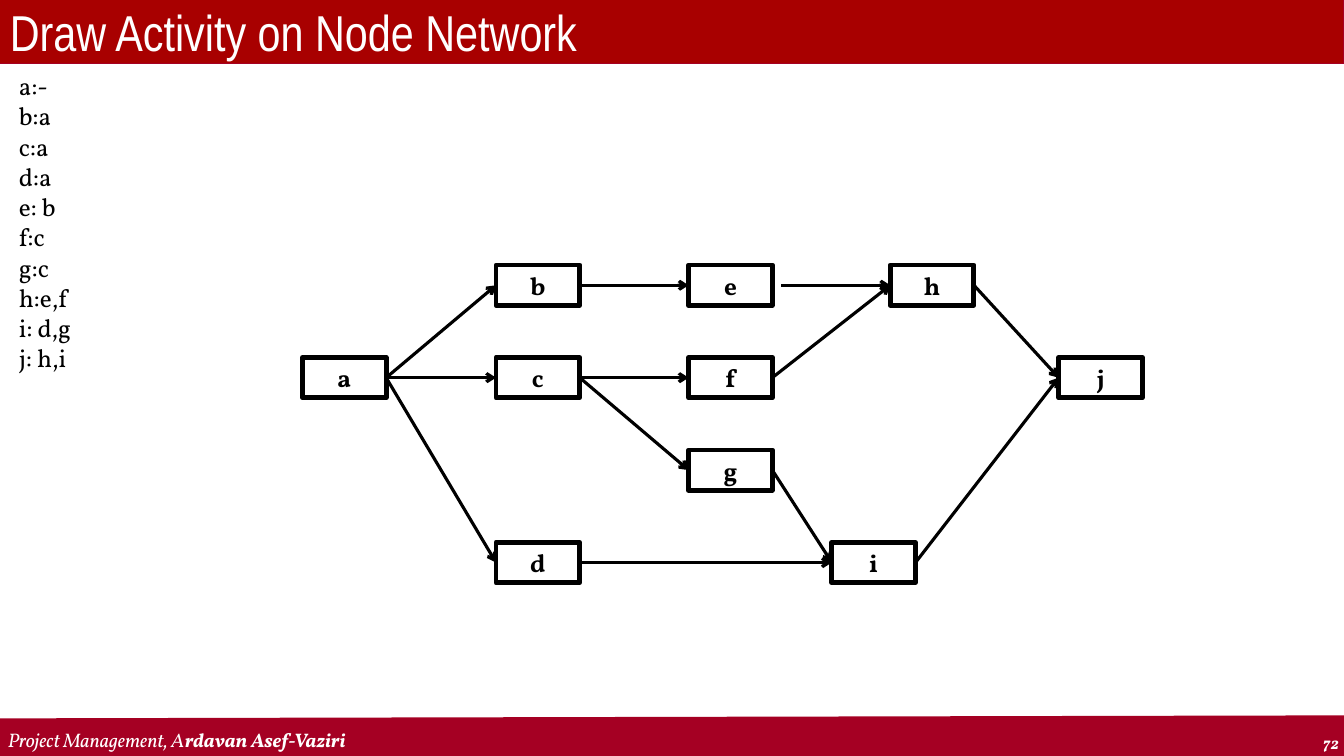
from dataclasses import dataclass

from lxml.etree import SubElement
from pptx import Presentation
from pptx.dml.color import RGBColor
from pptx.enum.shapes import MSO_CONNECTOR, MSO_SHAPE
from pptx.enum.text import MSO_ANCHOR, PP_ALIGN
from pptx.oxml.ns import qn
from pptx.shapes.autoshape import Shape
from pptx.shapes.connector import Connector
from pptx.slide import Slide
from pptx.util import Inches, Pt


@dataclass(frozen=True)
class Theme:
    """Colours, fonts and type sizes of the slide."""
    ink: RGBColor = RGBColor.from_string("000000")
    paper: RGBColor = RGBColor.from_string("FFFFFF")
    banner: RGBColor = RGBColor.from_string("A80000")
    crimson: RGBColor = RGBColor.from_string("A50023")
    title_font: str = "Arial Narrow"
    body_font: str = "Vollkorn"
    title_size: int = 36
    body_size: int = 18
    footer_size: int = 14
    number_size: int = 12


@dataclass(frozen=True)
class Area:
    """A rectangle on the slide, in inches."""
    left: float
    top: float
    width: float
    height: float

    def lengths(self) -> tuple[Inches, Inches, Inches, Inches]:
        """Return the rectangle as slide lengths."""
        return Inches(self.left), Inches(self.top), Inches(self.width), Inches(self.height)


@dataclass(frozen=True)
class Activity:
    """A node of the network, placed by its left edge and row."""
    name: str
    left: float
    row: int


@dataclass(frozen=True)
class Dependency:
    """An arrow between two activities, with an optional gap at its start."""
    before: str
    after: str
    gap: float = 0


THEME = Theme()
NODE_WIDTH, NODE_HEIGHT = 0.83, 0.4
FIRST_ROW, ROW_PITCH = 2.63, 0.917
PRECEDENCE = ["a:-", "b:a", "c:a", "d:a", "e: b", "f:c", "g:c", "h:e,f", "i: d,g", "j: h,i"]
ACTIVITIES = [
    Activity("a", 3, 1),
    Activity("b", 4.92, 0),
    Activity("c", 4.92, 1),
    Activity("d", 4.92, 3),
    Activity("e", 6.83, 0),
    Activity("f", 6.83, 1),
    Activity("g", 6.83, 2),
    Activity("h", 8.83, 0),
    Activity("i", 8.25, 3),
    Activity("j", 10.5, 1),
]
DEPENDENCIES = [
    Dependency("a", "b"),
    Dependency("a", "c"),
    Dependency("a", "d"),
    Dependency("b", "e"),
    Dependency("c", "f"),
    Dependency("c", "g"),
    Dependency("e", "h", 0.09),
    Dependency("f", "h"),
    Dependency("d", "i"),
    Dependency("g", "i"),
    Dependency("i", "j"),
    Dependency("h", "j"),
]


def add_box(page: Slide, area: Area, line: RGBColor, weight: float,
            fill: RGBColor | None = None) -> Shape:
    """Add an outlined rectangle without shadow."""
    box = page.shapes.add_shape(MSO_SHAPE.RECTANGLE, *area.lengths())
    box.shadow.inherit = False
    if fill is None:
        box.fill.background()
    else:
        box.fill.solid()
        box.fill.fore_color.rgb = fill
    box.line.color.rgb = line
    box.line.width = Pt(weight)
    return box


def write(box: Shape, lines: list[list[str]], size: int, color: RGBColor,
          font: str = THEME.body_font, align: PP_ALIGN = PP_ALIGN.LEFT,
          anchor: MSO_ANCHOR = MSO_ANCHOR.TOP, wrap: bool = True,
          bold: bool = False, italic: bool = False) -> None:
    """Fill a box with paragraphs, each given as a list of spans."""
    frame = box.text_frame
    frame.word_wrap = wrap
    frame.vertical_anchor = anchor
    for index, spans in enumerate(lines):
        para = frame.add_paragraph() if index else frame.paragraphs[0]
        para.alignment = align
        para.font.name, para.font.size = font, Pt(size)
        para.font.bold, para.font.italic = bold, italic
        para.font.color.rgb = color
        for text in spans:
            para.add_run().text = text


def add_line(page: Slide, start: tuple[float, float], end: tuple[float, float],
             color: RGBColor, weight: float) -> Connector:
    """Add a straight line without shadow."""
    points = [Inches(value) for value in (*start, *end)]
    line = page.shapes.add_connector(MSO_CONNECTOR.STRAIGHT, *points)
    line.line.color.rgb = color
    line.line.width = Pt(weight)
    SubElement(line._element.spPr, qn("a:effectLst"))
    return line


def add_frame(page: Slide) -> None:
    """Draw the footer band, page number, course line and title banner."""
    add_line(page, (-0.01, 7.33), (13.36, 7.3), THEME.crimson, 29.25)
    number = page.shapes.add_textbox(*Area(12.38, 7.22, 1, 0.3).lengths())
    write(number, [["72"]], THEME.number_size, THEME.paper,
          align=PP_ALIGN.RIGHT, bold=True, italic=True)
    footer = page.shapes.add_textbox(*Area(-0.02, 7.16, 10.45, 0.34).lengths())
    write(footer, [["Project Management, A", "rdavan Asef-Vaziri"]], THEME.footer_size,
          THEME.paper, anchor=MSO_ANCHOR.BOTTOM, italic=True)
    footer.text_frame.paragraphs[0].runs[1].font.bold = True
    add_box(page, Area(0, -0.01, 13.33, 0.64), THEME.banner, 0.75, THEME.banner)
    title = add_box(page, Area(0, 0, 13.33, 0.63), THEME.crimson, 0.75)
    write(title, [["Draw Activity on Node Network"]], THEME.title_size, THEME.paper,
          font=THEME.title_font, anchor=MSO_ANCHOR.MIDDLE)


def add_activity(page: Slide, activity: Activity) -> Shape:
    """Draw one activity node."""
    top = FIRST_ROW + activity.row * ROW_PITCH
    node = add_box(page, Area(activity.left, top, NODE_WIDTH, NODE_HEIGHT), THEME.ink, 3.5)
    write(node, [[activity.name]], THEME.body_size, THEME.ink, align=PP_ALIGN.CENTER,
          anchor=MSO_ANCHOR.MIDDLE, bold=True)
    return node


def add_dependency(page: Slide, dependency: Dependency, nodes: dict[str, Shape]) -> None:
    """Draw an arrow from the right of one node to the left of another."""
    before, after = nodes[dependency.before], nodes[dependency.after]
    start = ((before.left + before.width) / Inches(1) + dependency.gap,
             (before.top + before.height / 2) / Inches(1))
    end = (after.left / Inches(1), (after.top + after.height / 2) / Inches(1))
    arrow = add_line(page, start, end, THEME.ink, 2.25)
    if not dependency.gap:
        arrow.begin_connect(before, 3)
    arrow.end_connect(after, 1)
    SubElement(arrow.line._get_or_add_ln(), qn("a:tailEnd"), type="arrow")


def main() -> None:
    """Build the slide and save it."""
    deck = Presentation()
    deck.slide_width, deck.slide_height = Inches(13.33), Inches(7.5)
    page = deck.slides.add_slide(deck.slide_layouts[6])
    add_frame(page)
    precedence = page.shapes.add_textbox(*Area(0.09, 0.65, 0.76, 3.13).lengths())
    write(precedence, [[line] for line in PRECEDENCE], THEME.body_size, THEME.ink, wrap=False)
    nodes = {activity.name: add_activity(page, activity) for activity in ACTIVITIES}
    for dependency in DEPENDENCIES:
        add_dependency(page, dependency, nodes)
    deck.save("out.pptx")


if __name__ == "__main__":
    main()
